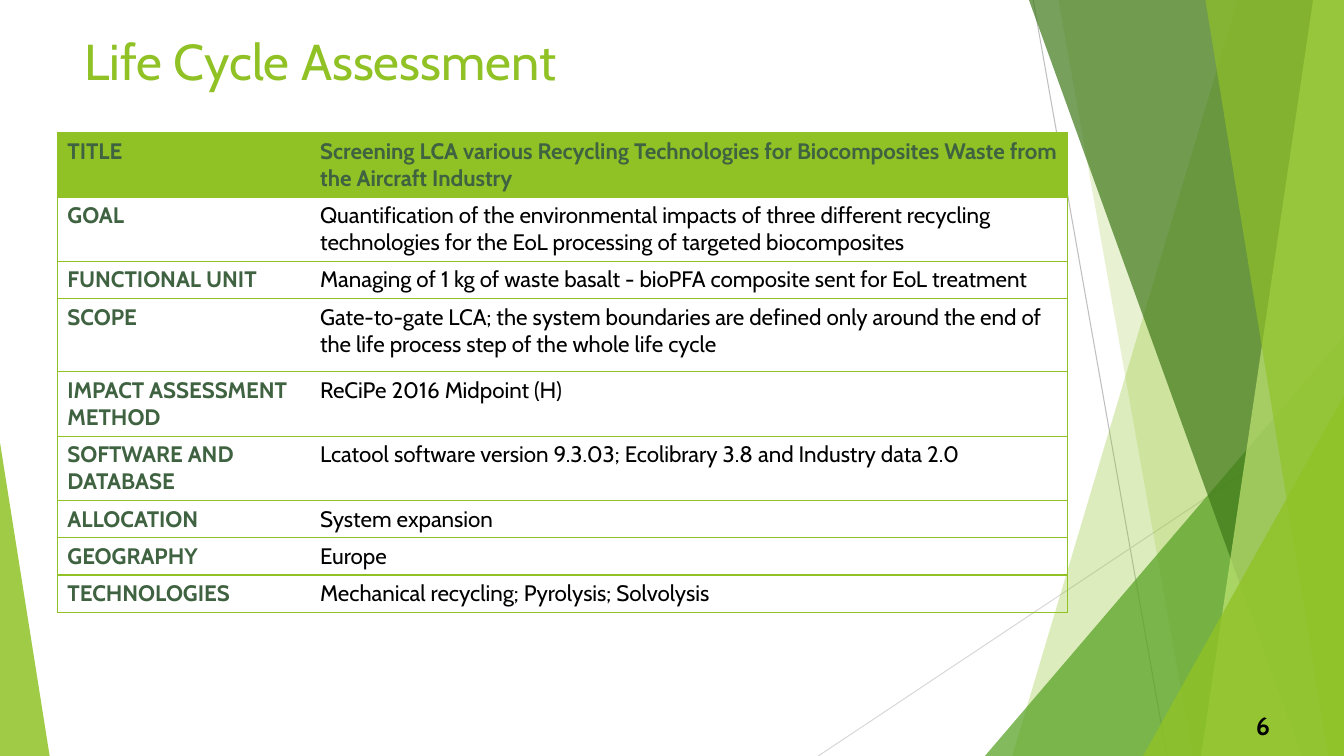
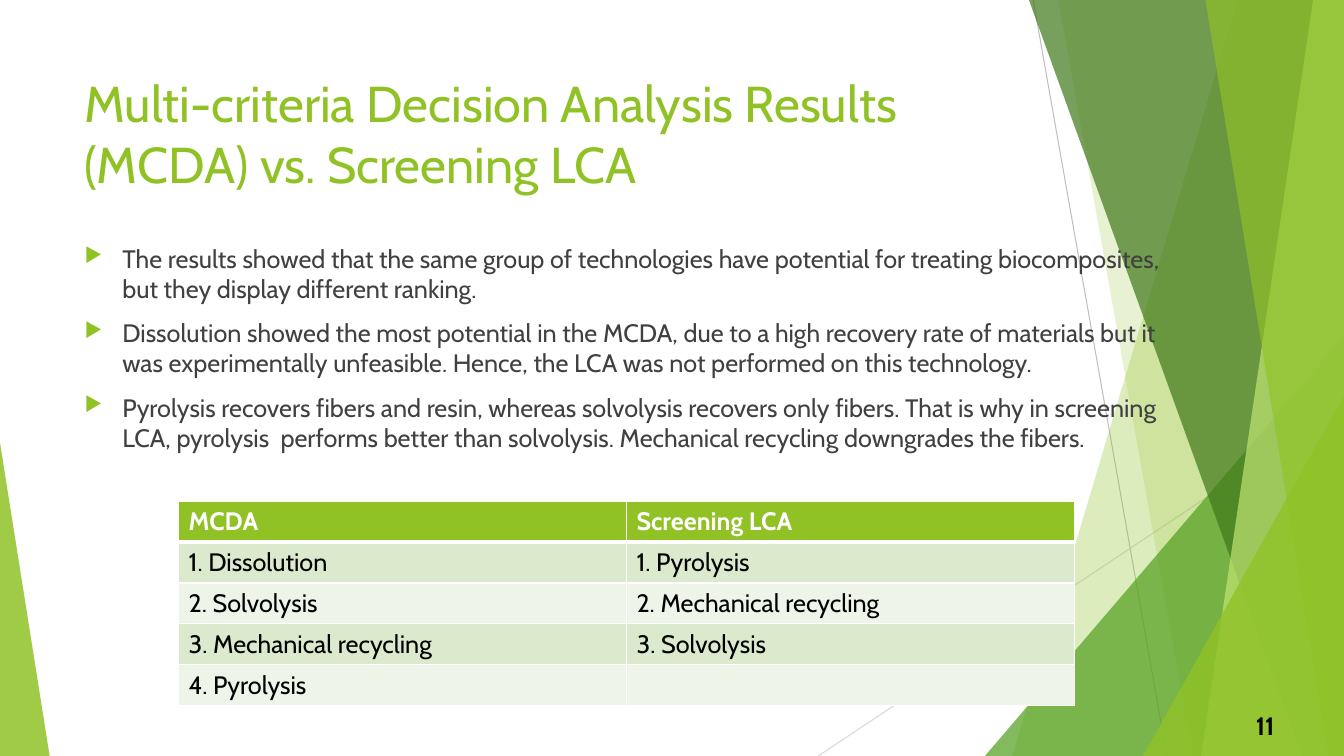
from pptx import Presentation
from pptx.dml.color import RGBColor as RGB
from pptx.enum.shapes import MSO_CONNECTOR as LINK, MSO_SHAPE as KIND
from pptx.enum.text import MSO_ANCHOR as ANCHOR
from pptx.oxml.ns import qn
from pptx.util import Pt
from lxml.etree import SubElement as sub, Element

INK = {
    "lime": "90C226", "pale": "C0E474", "leaf": "54A021", "deep": "3F7819",
    "label": "3F6241", "text": "404040", "black": "000000", "white": "FFFFFF",
    "grey": "BFBFBF", "mist": "D9D9D9", "odd": "DBE9CD", "even": "EEF4E8",
}
FONT = "Cabin"
WIDE, HIGH = 960, 540


def ink(name):
    return RGB.from_string(INK[name])


class Deck:
    """Holds the style and the current slide."""

    def __init__(self):
        self.show = Presentation()
        self.show.slide_width, self.show.slide_height = Pt(WIDE), Pt(HIGH)

    def page(self, title, top, num):
        blank = self.show.slide_layouts[6]
        self.shapes = self.show.slides.add_slide(blank).shapes
        self.decor()
        frame = self.text(890, 504, 54, 28.8, [num], 18, "black", bold=True)
        frame.vertical_anchor = ANCHOR.MIDDLE
        self.text(53.3, top, 677, 104, [title], 36, "lime")

    # Background facets, from back to front
    def decor(self):
        self.line(738, 0, 833.5, HIGH, "grey")
        self.line(WIDE, 290, 584.5, HIGH, "mist")
        self.panel(884, 723, "lime", 30)
        self.panel(756, 852, "lime", 20)
        self.wedge(703.5, 240, WIDE, 1, "leaf", 72)
        self.panel(735, 930, "deep", 70)
        self.panel(938, 858, "pale", 70)
        self.panel(861, 949, "lime", 65)
        self.wedge(816.5, 283, WIDE, 1, "lime", 80)
        self.wedge(0, 316, 35.5, 0, "lime", 85)

    def line(self, x1, y1, x2, y2, hue):
        link = self.shapes.add_connector(
            LINK.STRAIGHT, Pt(x1), Pt(y1), Pt(x2), Pt(y2))
        link.line.color.rgb = ink(hue)
        link.line.width = Pt(0.75)
        sub(link._element.spPr, qn("a:effectLst"))

    def panel(self, top, foot, hue, alpha):
        """Area from a slanted left edge to the right side of the slide."""
        pen = self.shapes.build_freeform(top, 0, scale=Pt(1))
        pen.add_line_segments([(WIDE, 0), (WIDE, HIGH), (foot, HIGH)])
        self.tint(pen.convert_to_shape(), hue, alpha)

    def wedge(self, left, top, right, tip, hue, alpha):
        """Triangle standing on the bottom of the slide."""
        shape = self.shapes.add_shape(
            KIND.ISOSCELES_TRIANGLE, Pt(left), Pt(top),
            Pt(right - left), Pt(HIGH - top))
        shape.adjustments[0] = tip
        self.tint(shape, hue, alpha)

    def tint(self, shape, hue, alpha):
        shape.shadow.inherit = False
        shape.line.fill.background()
        shape.fill.solid()
        shape.fill.fore_color.rgb = ink(hue)
        clr = shape._element.spPr.find(".//" + qn("a:srgbClr"))
        sub(clr, qn("a:alpha"), val=str(alpha * 1000))

    # Text
    def style(self, par, size, hue, bold=False):
        font = par.font
        font.name, font.size, font.bold = FONT, Pt(size), bold
        font.color.rgb = ink(hue)

    def text(self, left, top, wide, high, lines, size, hue, bold=False):
        box = self.shapes.add_textbox(Pt(left), Pt(top), Pt(wide), Pt(high))
        frame = box.text_frame
        frame.word_wrap = True
        frame.text = "\n".join(lines)
        for par in frame.paragraphs:
            self.style(par, size, hue, bold)
        return frame

    def list(self, left, top, wide, high, lines):
        frame = self.text(left, top, wide, high, lines, 18, "text")
        for par in frame.paragraphs:
            par.space_before = Pt(10)
            props = par._p.get_or_add_pPr()
            props.set("marL", str(Pt(27)))
            props.set("indent", str(Pt(-27)))
            clr = Element(qn("a:buClr"))
            sub(clr, qn("a:srgbClr"), val=INK["lime"])
            size = Element(qn("a:buSzPct"), val="80000")
            char = Element(qn("a:buChar"), char="▶")
            spot = props.index(props.find(qn("a:defRPr")))
            props[spot:spot] = [clr, size, char]

    # Tables: look(row, col) gives fill, text colour, bold and edges
    def grid(self, left, top, cols, highs, rows, size, look):
        table = self.shapes.add_table(
            len(rows), len(cols), Pt(left), Pt(top),
            Pt(sum(cols)), Pt(sum(highs))).table
        table.horz_banding = False
        for col, wide in zip(table.columns, cols):
            col.width = Pt(wide)
        for r, (row, high) in enumerate(zip(rows, highs)):
            table.rows[r].height = Pt(high)
            for c, words in enumerate(row):
                fill, hue, bold, edges = look(r, c)
                cell = table.cell(r, c)
                cell.text = words
                self.style(cell.text_frame.paragraphs[0], size, hue, bold)
                if fill:
                    cell.fill.solid()
                    cell.fill.fore_color.rgb = ink(fill)
                else:
                    cell.fill.background()
                self.edge(cell, edges)

    def edge(self, cell, edges):
        """Set left, right, top and bottom borders; None draws no line."""
        props = cell._tc.get_or_add_tcPr()
        for spot, (side, edge) in enumerate(zip("LRTB", edges)):
            line = Element(qn("a:ln" + side))
            if edge:
                hue, width = edge
                line.set("w", str(Pt(width)))
                fill = sub(line, qn("a:solidFill"))
                sub(fill, qn("a:srgbClr"), val=INK[hue])
            else:
                line.set("w", "0")
                sub(line, qn("a:noFill"))
            props.insert(spot, line)


def framed(r, c):
    """Green frame and row lines, no line between the columns."""
    rule = ("lime", 1)
    sides = (None, rule) if c else (rule, None)
    bold = r == 0 or c == 0
    fill = None if r else "lime"
    return fill, "label" if bold else "black", bold, (*sides, rule, rule)


def banded(r, c):
    """Green head over striped rows, with white lines."""
    thin, thick = ("white", 1), ("white", 3)
    if r == 0:
        return "lime", "white", True, (thin, thin, thin, thick)
    fill = "odd" if r % 2 else "even"
    return fill, "black", False, (thin, thin, thick if r == 1 else thin, thin)


def main():
    deck = Deck()

    # Assessment set-up
    deck.page("Life Cycle Assessment", 18, "6")
    one, two = 26.6, 46
    deck.grid(41, 94.7, [180.5, 541], [two, two, one, 52.4, two, two, one, one, one], [
        ("TITLE", "Screening LCA various Recycling Technologies for "
                  "Biocomposites Waste from the Aircraft Industry"),
        ("GOAL", "Quantification of the environmental impacts of three different "
                 "recycling technologies for the EoL processing of targeted "
                 "biocomposites"),
        ("FUNCTIONAL UNIT", "Managing of 1 kg of waste basalt - bioPFA composite "
                            "sent for EoL treatment"),
        ("SCOPE", "Gate-to-gate LCA; the system boundaries are defined only around "
                  "the end of the life process step of the whole life cycle"),
        ("IMPACT ASSESSMENT METHOD", "ReCiPe 2016 Midpoint (H)"),
        ("SOFTWARE AND DATABASE", "Lcatool software version 9.3.03; Ecolibrary 3.8 "
                                  "and Industry data 2.0"),
        ("ALLOCATION", "System expansion"),
        ("GEOGRAPHY", "Europe"),
        ("TECHNOLOGIES", "Mechanical recycling; Pyrolysis; Solvolysis"),
    ], 16, framed)

    # Ranking compared
    deck.page("Multi-criteria Decision Analysis Results (MCDA) vs. Screening LCA",
              48, "11")
    deck.list(53.3, 170, 788.5, 165, [
        "The results showed that the same group of technologies have potential for "
        "treating biocomposites, but they display different ranking.",
        "Dissolution showed the most potential in the MCDA, due to a high recovery "
        "rate of materials but it was experimentally unfeasible. Hence, the LCA was "
        "not performed on this technology.",
        "Pyrolysis recovers fibers and resin, whereas solvolysis recovers only "
        "fibers. That is why in screening LCA, pyrolysis  performs better than "
        "solvolysis. Mechanical recycling downgrades the fibers.",
    ])
    deck.grid(127.5, 358, [320, 320], [29.2] * 5, [
        ("MCDA", "Screening LCA"),
        ("1. Dissolution", "1. Pyrolysis"),
        ("2. Solvolysis", "2. Mechanical recycling"),
        ("3. Mechanical recycling", "3. Solvolysis"),
        ("4. Pyrolysis", ""),
    ], 18, banded)

    deck.show.save("out.pptx")


if __name__ == "__main__":
    main()
